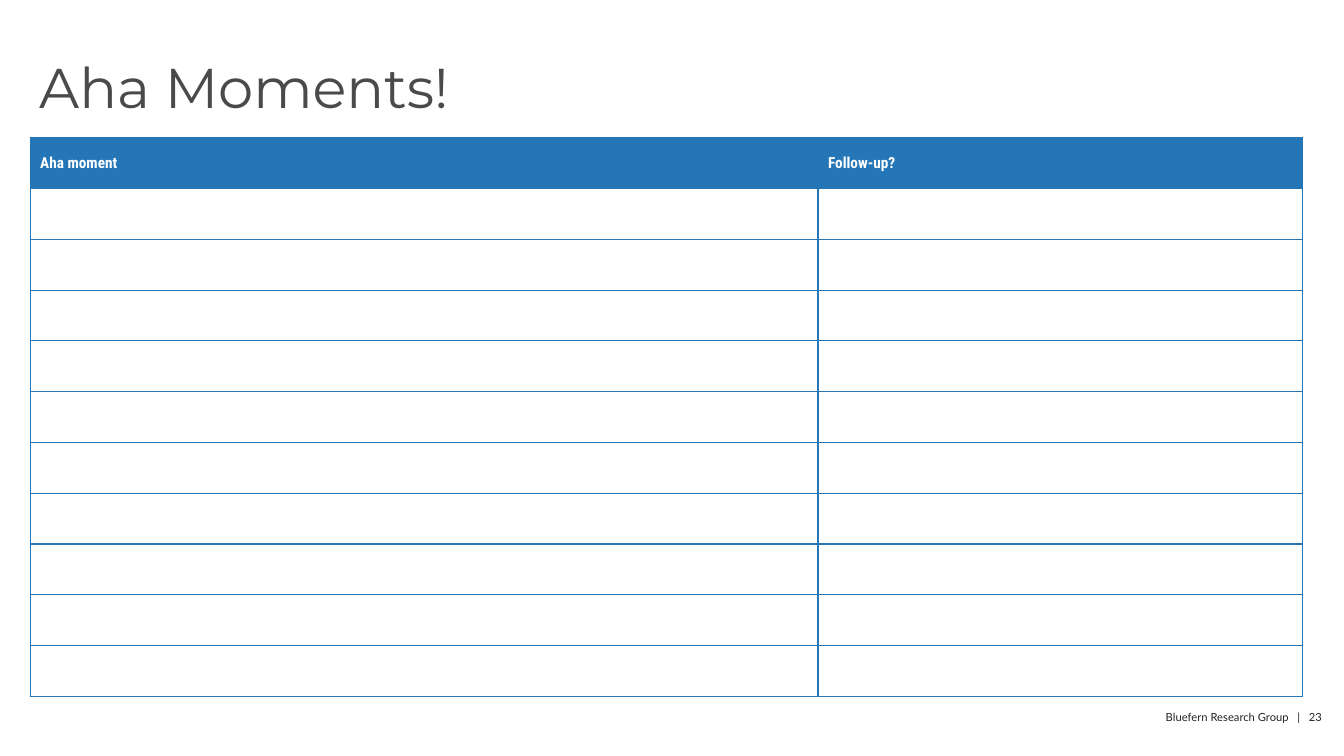
from lxml import etree
from pptx import Presentation
from pptx import util as u
from pptx.dml.color import RGBColor
from pptx.enum import text
from pptx.oxml.ns import qn

BLUE = "2576B7"
WHITE = "FFFFFF"
COLUMNS = [("Aha moment", 19.86), ("Follow-up?", 12.22)]
ROWS = 11
ROW_HEIGHT = 1.28


def color(value):
    return RGBColor.from_string(value)


def add_run(p, words, size, font, fill, bold=False):
    r = p.add_run()
    r.text = words
    r.font.size = u.Pt(size)
    r.font.name = font
    r.font.bold = bold
    r.font.color.rgb = color(fill)


def add_text(s, box, words, size, font, fill, align=text.PP_ALIGN.LEFT, spacing=1.0):
    tf = s.shapes.add_textbox(*[u.Cm(v) for v in box]).text_frame
    tf.word_wrap = True
    tf.margin_left = tf.margin_top = tf.margin_right = tf.margin_bottom = 0
    p = tf.paragraphs[0]
    p.alignment = align
    p.line_spacing = spacing
    add_run(p, words, size, font, fill)


def style_cell(cell, fill):
    """Draw the blue grid lines first, since the schema puts them before the fill."""
    tc_pr = cell._tc.get_or_add_tcPr()
    for side in ("a:lnL", "a:lnR", "a:lnT", "a:lnB"):
        ln = etree.SubElement(tc_pr, qn(side), w=str(u.Pt(1)))
        solid = etree.SubElement(ln, qn("a:solidFill"))
        etree.SubElement(solid, qn("a:srgbClr"), val=BLUE)
    cell.fill.solid()
    cell.fill.fore_color.rgb = color(fill)
    cell.vertical_anchor = text.MSO_ANCHOR.MIDDLE


def add_moments_table(s, left, top):
    width = sum(w for _, w in COLUMNS)
    table = s.shapes.add_table(ROWS, len(COLUMNS), u.Cm(left), u.Cm(top),
                               u.Cm(width), u.Cm(ROWS * ROW_HEIGHT)).table
    for row in table.rows:
        row.height = u.Cm(ROW_HEIGHT)
    for col, (heading, col_width) in enumerate(COLUMNS):
        table.columns[col].width = u.Cm(col_width)
        for row in range(ROWS):
            style_cell(table.cell(row, col), WHITE if row else BLUE)
        p = table.cell(0, col).text_frame.paragraphs[0]
        add_run(p, heading, 10.9, "Roboto Condensed", WHITE, bold=True)


def main():
    prs = Presentation()
    prs.slide_width, prs.slide_height = u.Cm(33.88), u.Cm(19.05)
    s = prs.slides.add_slide(prs.slide_layouts[6])
    add_text(s, (24.46, 17.91, 8.87, 0.33), "Bluefern Research Group   |   23",
             8, "Lato", "242424", align=text.PP_ALIGN.RIGHT)
    add_text(s, (0.99, 1.52, 24.89, 3.15), "Aha Moments!",
             40, "Montserrat", "4A4A4A", spacing=0.9)
    add_moments_table(s, 0.76, 3.47)
    prs.save("out.pptx")


if __name__ == "__main__":
    main()
